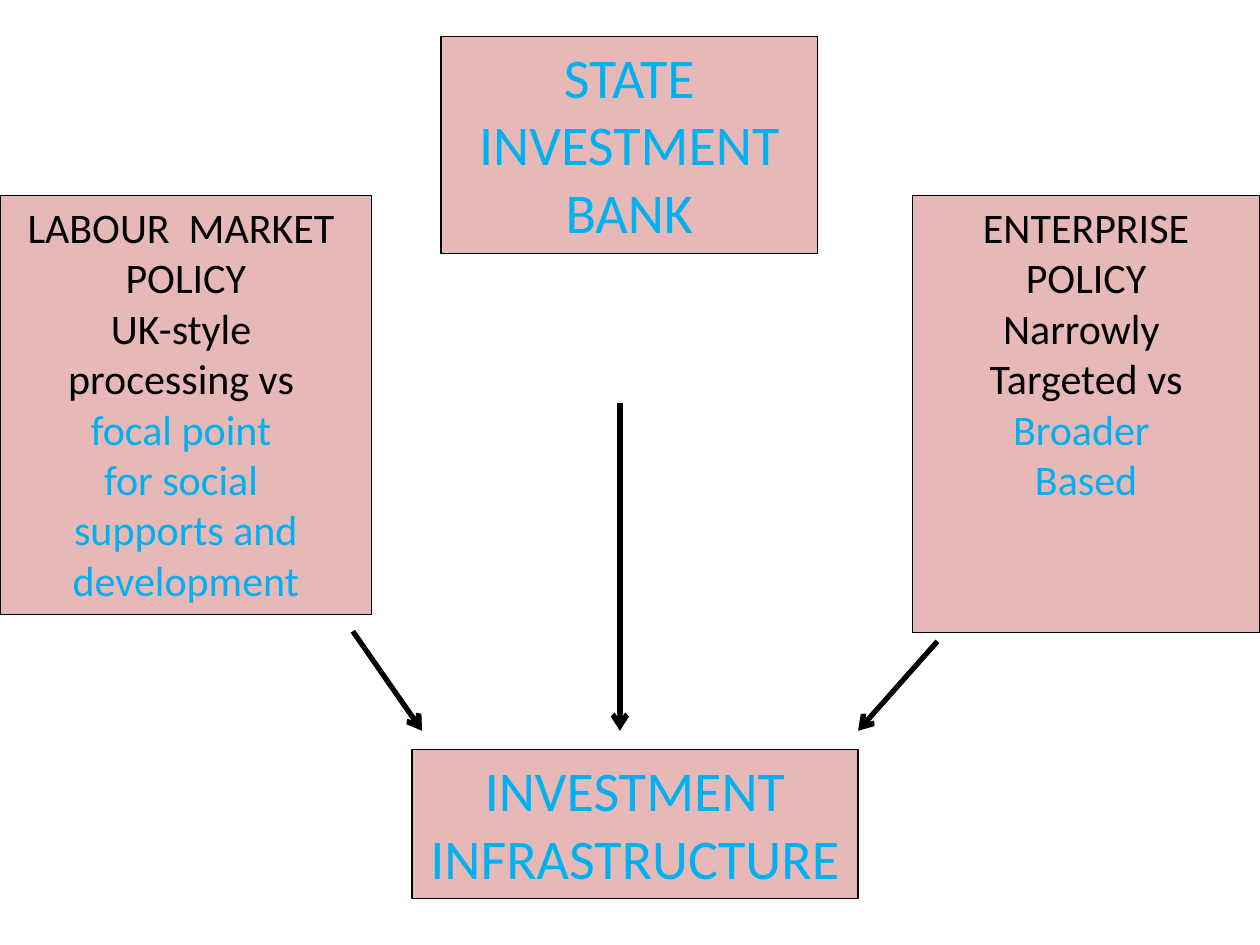
from dataclasses import dataclass
from typing import NamedTuple

import pptx
import pptx.dml.color
import pptx.enum.shapes
import pptx.enum.text
import pptx.oxml
import pptx.oxml.ns
import pptx.util

Inches = pptx.util.Inches
Pt = pptx.util.Pt
RGB = pptx.dml.color.RGBColor


@dataclass(frozen=True)
class Theme:
    font: str = "Calibri"
    fill: RGB = RGB(0xE6, 0xB9, 0xB8)
    ink: RGB = RGB(0, 0, 0)
    accent: RGB = RGB(0x00, 0xB0, 0xF0)
    heading: int = 32
    body: int = 24
    border: float = 0.75
    arrow: float = 3


THEME = Theme()


class Run(NamedTuple):
    text: str
    color: RGB


class Box(NamedTuple):
    left: float
    top: float
    width: float
    height: float
    size: int
    paragraphs: list[list[Run]]


class Arrow(NamedTuple):
    x1: float
    y1: float
    x2: float
    y2: float


def lines(color: RGB, *texts: str) -> list[list[Run]]:
    return [[Run(text, color)] for text in texts]


BOXES = [
    Box(3.5, 0.29, 2.99, 1.72, THEME.heading,
        lines(THEME.accent, "STATE INVESTMENT BANK")),
    Box(7.24, 1.55, 2.76, 3.47, THEME.body,
        lines(THEME.ink, "ENTERPRISE POLICY", "Narrowly ")
        + [[Run("Targeted vs ", THEME.ink), Run("Broader ", THEME.accent)]]
        + lines(THEME.accent, "Based")),
    Box(0, 1.55, 2.95, 3.33, THEME.body,
        lines(THEME.ink, "LABOUR  MARKET ", "POLICY", "UK-style ", "processing vs ")
        + lines(THEME.accent, "focal point ", "for social ", "supports and development")),
    Box(3.27, 5.95, 3.54, 1.18, THEME.heading,
        lines(THEME.accent, "INVESTMENT", "INFRASTRUCTURE")),
]

ARROW_END = 5.8
ARROWS = [
    Arrow(2.8, 5.01, 3.35, ARROW_END),
    Arrow(7.44, 5.09, 6.81, ARROW_END),
    Arrow(4.92, 3.2, 4.92, ARROW_END),
]


def set_all(target: object, values: dict[str, object]) -> None:
    for name, value in values.items():
        setattr(target, name, value)


def draw_box(slide: pptx.slide.Slide, box: Box) -> None:
    sp = slide.shapes.add_shape(
        pptx.enum.shapes.MSO_SHAPE.RECTANGLE,
        Inches(box.left), Inches(box.top), Inches(box.width), Inches(box.height))
    sp.shadow.inherit = False
    sp.fill.solid()
    sp.fill.fore_color.rgb = THEME.fill
    sp.line.color.rgb = THEME.ink
    sp.line.width = Pt(THEME.border)
    tf = sp.text_frame
    set_all(tf, {"word_wrap": True,
                 "vertical_anchor": pptx.enum.text.MSO_ANCHOR.TOP})
    for i, runs in enumerate(box.paragraphs):
        p = tf.add_paragraph() if i else tf.paragraphs[0]
        p.alignment = pptx.enum.text.PP_ALIGN.CENTER
        for run in runs:
            r = p.add_run()
            r.text = run.text
            set_all(r.font, {"name": THEME.font, "size": Pt(box.size)})
            r.font.color.rgb = run.color


def draw_arrow(slide: pptx.slide.Slide, arrow: Arrow) -> None:
    cxn = slide.shapes.add_connector(
        pptx.enum.shapes.MSO_CONNECTOR.STRAIGHT,
        Inches(arrow.x1), Inches(arrow.y1), Inches(arrow.x2), Inches(arrow.y2))
    cxn.line.color.rgb = THEME.ink
    cxn.line.width = Pt(THEME.arrow)
    ns = pptx.oxml.ns.nsdecls("a")
    cxn.line._get_or_add_ln().append(
        pptx.oxml.parse_xml(f'<a:tailEnd {ns} type="arrow"/>'))
    cxn._element.spPr.append(pptx.oxml.parse_xml(f"<a:effectLst {ns}/>"))


def main() -> None:
    prs = pptx.Presentation()
    set_all(prs, {"slide_width": Inches(10), "slide_height": Inches(7.5)})
    slide = prs.slides.add_slide(prs.slide_layouts[6])
    for box in BOXES:
        draw_box(slide, box)
    for arrow in ARROWS:
        draw_arrow(slide, arrow)
    prs.save("out.pptx")


if __name__ == "__main__":
    main()
